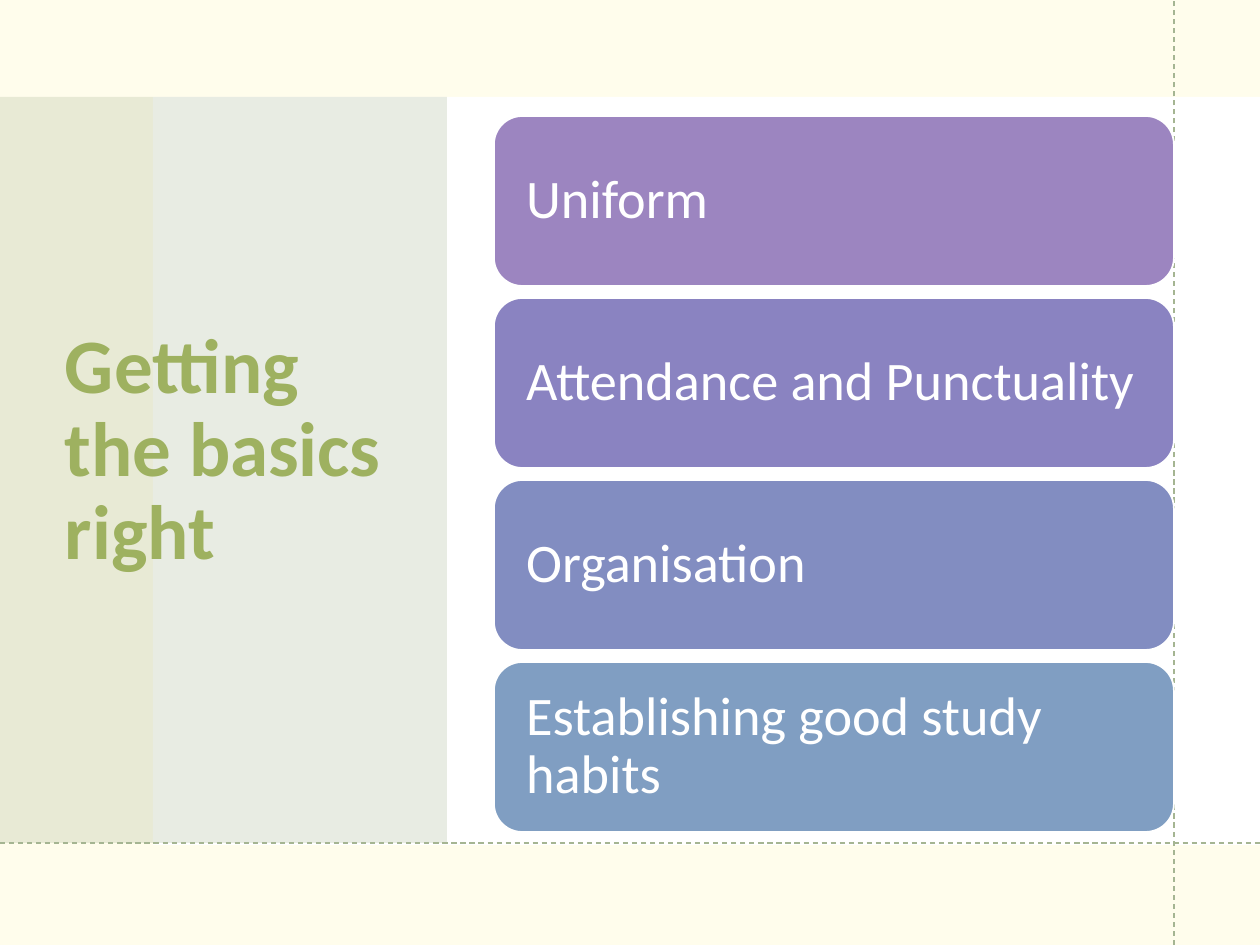
from dataclasses import dataclass
from typing import Any

from lxml.etree import SubElement
from pptx import Presentation
from pptx.dml.color import RGBColor
from pptx.enum.dml import MSO_LINE
from pptx.enum.shapes import MSO_CONNECTOR, MSO_SHAPE
from pptx.enum.text import MSO_ANCHOR, MSO_AUTO_SIZE, PP_ALIGN
from pptx.oxml.ns import qn
from pptx.util import Emu, Pt

PX_PER_INCH = 126
SLIDE_WIDTH, SLIDE_HEIGHT = 1260, 945
SAGE, WHITE = "A5B592", "FFFFFF"
CARD_LEFT, CARD_TOP, CARD_WIDTH, CARD_HEIGHT, CARD_STEP = 494, 116, 680, 170, 182


@dataclass(frozen=True)
class Box:
    left: int
    top: int
    width: int
    height: int


@dataclass(frozen=True)
class Basic:
    wording: str
    fill: str


BASICS = (
    Basic("Uniform", "9C85C0"),
    Basic("Attendance and Punctuality", "8A83C1"),
    Basic("Organisation", "828DC1"),
    Basic("Establishing good study habits", "809EC2"),
)


def px(length: int) -> Emu:
    return Emu(round(length * 914400 / PX_PER_INCH))


def paint(fill: Any, colour: str) -> None:
    fill.solid()
    fill.fore_color.rgb = RGBColor.from_string(colour)


def set_all(target: Any, values: dict[str, Any]) -> None:
    for attribute, value in values.items():
        setattr(target, attribute, value)


def write(shape: Any, wording: str, size: int, colour: str, bold: bool, inset: int) -> None:
    frame = shape.text_frame
    set_all(frame, {
        "text": wording,
        "word_wrap": True,
        "auto_size": MSO_AUTO_SIZE.NONE,
        "vertical_anchor": MSO_ANCHOR.MIDDLE,
        "margin_left": px(inset),
        "margin_right": px(inset),
    })
    paragraph = frame.paragraphs[0]
    set_all(paragraph, {"alignment": PP_ALIGN.LEFT, "line_spacing": 0.9})
    font = paragraph.runs[0].font
    set_all(font, {"name": "Calibri", "size": Pt(size), "bold": bold})
    paint(font.fill, colour)


def add_block(slide: Any, box: Box, colour: str, kind: MSO_SHAPE = MSO_SHAPE.RECTANGLE) -> Any:
    block = slide.shapes.add_shape(
        kind, px(box.left), px(box.top), px(box.width), px(box.height)
    )
    block.shadow.inherit = False
    paint(block.fill, colour)
    block.line.fill.background()
    return block


def add_card(slide: Any, basic: Basic, box: Box) -> None:
    card = add_block(slide, box, basic.fill, MSO_SHAPE.ROUNDED_RECTANGLE)
    paint(card.line.fill, WHITE)
    card.line.width = Pt(1)
    write(card, basic.wording, 31, WHITE, False, 24)


def add_guide(slide: Any, x1: int, y1: int, x2: int, y2: int) -> None:
    guide = slide.shapes.add_connector(
        MSO_CONNECTOR.STRAIGHT, px(x1), px(y1), px(x2), px(y2)
    )
    paint(guide.line.fill, SAGE)
    set_all(guide.line, {"width": Pt(0.75), "dash_style": MSO_LINE.DASH})
    SubElement(guide._element.spPr, qn("a:effectLst"))


def add_heading(slide: Any, wording: str, box: Box) -> None:
    heading = slide.shapes.title
    set_all(heading, {
        "left": px(box.left),
        "top": px(box.top),
        "width": px(box.width),
        "height": px(box.height),
    })
    write(heading, wording, 44, "9EB160", True, 13)
    tree = slide.shapes._spTree
    tree.remove(heading._element)
    tree.append(heading._element)


def main() -> None:
    presentation = Presentation()
    set_all(presentation, {"slide_width": px(SLIDE_WIDTH), "slide_height": px(SLIDE_HEIGHT)})
    slide = presentation.slides.add_slide(presentation.slide_layouts[5])
    paint(slide.background.fill, "FFFDEC")

    add_block(slide, Box(153, 97, 1107, 748), WHITE)
    side_panel = add_block(slide, Box(0, 97, 447, 746), SAGE)
    tint = side_panel.fill._xPr.find(qn("a:solidFill"))[0]
    SubElement(tint, qn("a:alpha"), val="25000")
    add_heading(slide, "Getting the basics right", Box(52, 93, 373, 717))
    add_guide(slide, 1174, SLIDE_HEIGHT, 1174, 0)
    add_guide(slide, 0, 843, SLIDE_WIDTH, 843)

    for row, basic in enumerate(BASICS):
        top = CARD_TOP + row * CARD_STEP
        add_card(slide, basic, Box(CARD_LEFT, top, CARD_WIDTH, CARD_HEIGHT))

    presentation.save("out.pptx")


if __name__ == "__main__":
    main()
